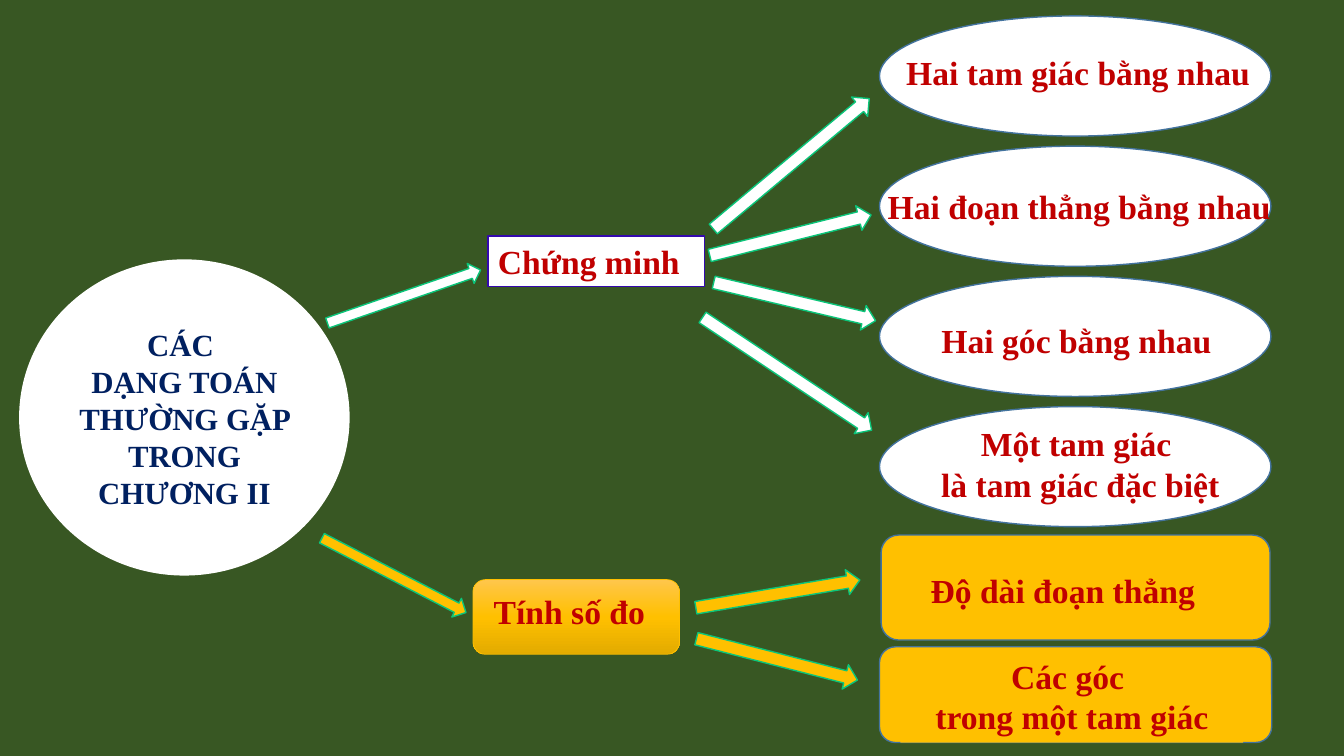
"""Build a mind map of the common problem types in chapter II."""
import copy

import pptx
import pptx.dml.color
import pptx.enum.shapes
import pptx.enum.text
import pptx.oxml.ns
import pptx.util

WIDTH, HEIGHT = pptx.util.Inches(13.33), pptx.util.Inches(7.5)
COLUMN, ROW = WIDTH / 160, HEIGHT / 90
FONT = "Times New Roman"
COLOURS = {
    "board": "385723", "white": "FFFFFF", "gold": "FFC000", "navy": "002060",
    "red": "C00000", "green": "0BC57A", "blue": "43739E", "violet": "3409AF",
    "light gold": "FFC64B", "dark gold": "E3AB00",
}
KINDS = pptx.enum.shapes.MSO_SHAPE
ALIGN = pptx.enum.text.PP_ALIGN
ANCHOR = pptx.enum.text.MSO_ANCHOR


def colour(name):
    """Return the named colour."""
    return pptx.dml.color.RGBColor.from_string(COLOURS[name])


def place(left, top, width, height):
    """Turn grid columns and rows into slide lengths."""
    return [round(left * COLUMN), round(top * ROW), round(width * COLUMN), round(height * ROW)]


def add_box(page, kind, area, fill, line=None, weight=1):
    """Add a filled preset shape, outlined if a line colour is given."""
    box = page.shapes.add_shape(kind, *place(*area))
    box.shadow.inherit = False
    box.fill.solid()
    box.fill.fore_color.rgb = colour(fill)
    if line:
        box.line.color.rgb = colour(line)
        box.line.width = pptx.util.Pt(weight)
    else:
        box.line.fill.background()
    return box


def write(box, lines, size, ink, align, anchor=ANCHOR.TOP):
    """Write bold paragraphs into a box."""
    frame = box.text_frame
    frame.word_wrap = True
    frame.auto_size = pptx.enum.text.MSO_AUTO_SIZE.NONE
    frame.vertical_anchor = anchor
    frame.text = "\n".join(lines)
    for para in frame.paragraphs:
        para.alignment = align
        para.font.name = FONT
        para.font.size = pptx.util.Pt(size)
        para.font.bold = True
        para.font.color.rgb = colour(ink)


def add_label(page, area, lines, align=ALIGN.LEFT):
    """Add a red label without fill."""
    write(page.shapes.add_textbox(*place(*area)), lines, 24, "red", align)


def add_arrow(page, centre, length, thickness, angle, fill):
    """Add a block arrow turned about its centre."""
    across, down = centre
    area = (across - length / 2, down - thickness / 2, length, thickness)
    add_box(page, KINDS.RIGHT_ARROW, area, fill, "green").rotation = angle


def shade(box, names):
    """Fill a box with a three-colour gradient running downwards."""
    box.fill.gradient()
    box.fill.gradient_angle = 270
    stop_list = box._element.spPr.find(".//" + pptx.oxml.ns.qn("a:gsLst"))
    stop_list.append(copy.deepcopy(stop_list[0]))
    for index, (stop, name) in enumerate(zip(box.fill.gradient_stops, names)):
        stop.position = index / 2
        stop.color.rgb = colour(name)


def add_topic(page):
    """Add the central circle with the slide title over it."""
    add_box(page, KINDS.OVAL, (2.4, 31, 39.1, 37.4), "white", "white", 1.5)
    title = page.shapes.title
    title.left, title.top, title.width, title.height = place(8.1, 36.5, 27.7, 26.5)
    frame = title.text_frame
    frame.margin_left = frame.margin_right = 0
    lines = ["CÁC ", "DẠNG TOÁN THƯỜNG GẶP TRONG CHƯƠNG II"]
    write(title, lines, 22, "navy", ALIGN.CENTER, ANCHOR.MIDDLE)
    title._element.getparent().append(title._element)


def add_proofs(page):
    """Add the white branch of things to prove."""
    heading = add_box(page, KINDS.RECTANGLE, (58.1, 28.1, 25.8, 6), "white", "violet", 0.75)
    write(heading, ["Chứng minh"], 24, "red", ALIGN.LEFT)
    add_arrow(page, (48.1, 35.3), 19.3, 2.5, 340.9, "white")
    proofs = [
        (["Hai tam giác bằng nhau"], (106.7, 5.6, 45, 6), ALIGN.LEFT, (94.2, 19.5), 24.2, 320.1),
        (["Hai đoạn thẳng bằng nhau"], (104.5, 21.6, 49.6, 6), ALIGN.LEFT, (94.1, 28), 19.8, 345.9),
        (["Hai góc bằng nhau"], (110.9, 37.5, 38.3, 6), ALIGN.LEFT, (94.6, 35.9), 19.8, 13.3),
        (["Một tam giác ", "là tam giác đặc biệt"], (109.1, 49.8, 39, 10.9), ALIGN.CENTER,
         (93.7, 44.5), 24.2, 33.7),
    ]
    for index, (lines, area, align, centre, length, angle) in enumerate(proofs):
        add_box(page, KINDS.OVAL, (104.7, 1.9 + 15.5 * index, 46.6, 14.3), "white", "blue")
        add_label(page, area, lines, align)
        add_arrow(page, centre, length, 3, angle, "white")


def add_measures(page):
    """Add the gold branch of things to measure."""
    heading = add_box(page, KINDS.ROUNDED_RECTANGLE, (56.3, 69, 24.6, 8.9), "gold", "gold", 0.5)
    shade(heading, ["light gold", "gold", "dark gold"])
    add_label(page, (57.6, 69.7, 22.2, 6), ["Tính số đo"])
    add_arrow(page, (46.9, 68.5), 19.3, 2.5, 27.3, "gold")
    measures = [
        (["Độ dài đoạn thẳng"], (104.9, 63.7, 46.3, 12.5), (109.6, 67.3, 35.5, 6), ALIGN.LEFT,
         (92.6, 70.7), 350.4),
        (["Các góc ", "trong một tam giác"], (104.7, 77, 46.7, 11.4), (107.2, 77.5, 40.8, 10.9),
         ALIGN.CENTER, (92.5, 78.5), 14.4),
    ]
    for lines, panel, area, align, centre, angle in measures:
        add_box(page, KINDS.FLOWCHART_ALTERNATE_PROCESS, panel, "gold", "blue")
        write(add_box(page, KINDS.RECTANGLE, area, "gold"), lines, 24, "red", align)
        add_arrow(page, centre, 19.8, 3, angle, "gold")


def main():
    """Build and save the deck."""
    deck = pptx.Presentation()
    deck.slide_width, deck.slide_height = WIDTH, HEIGHT
    page = deck.slides.add_slide(deck.slide_layouts.get_by_name("Title Only"))
    page.background.fill.solid()
    page.background.fill.fore_color.rgb = colour("board")
    add_topic(page)
    add_proofs(page)
    add_measures(page)
    deck.save("out.pptx")


if __name__ == "__main__":
    main()
